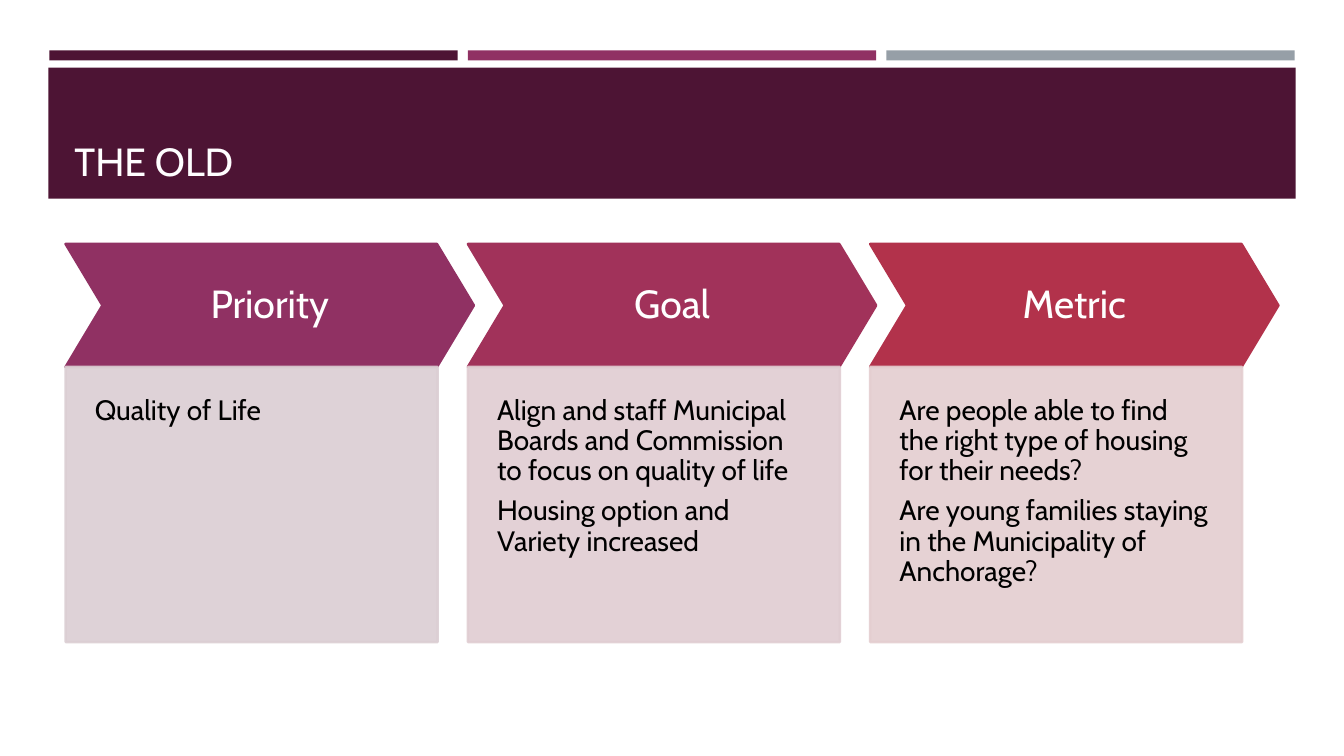
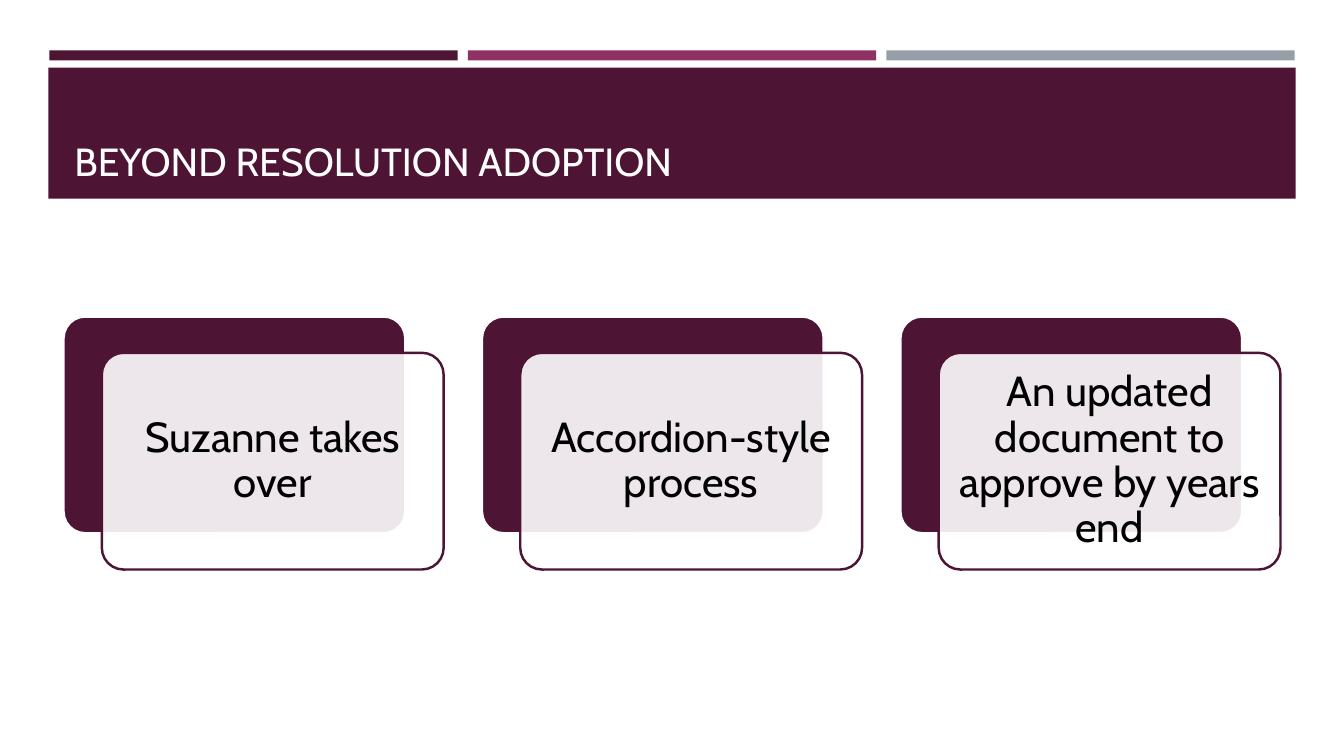
"""Build two slides: a chevron process and a row of layered cards."""
from dataclasses import dataclass

from lxml.etree import SubElement
from pptx import Presentation
from pptx.dml.color import RGBColor as Color
from pptx.dml.fill import FillFormat
from pptx.enum.shapes import MSO_SHAPE as Preset
from pptx.enum.text import MSO_ANCHOR as Anchor, PP_ALIGN as Align
from pptx.oxml.ns import qn
from pptx.shapes.autoshape import Shape
from pptx.slide import Slide
from pptx.util import Inches, Pt


@dataclass(frozen=True)
class Theme:
    font: str = "Cabin"
    plum: str = "4D1434"
    violet: str = "903163"
    grey: str = "969FA7"
    white: str = "FFFFFF"
    title: str = "FFFEFF"
    black: str = "000000"
    heading_size: int = 28
    body_size: int = 20
    card_size: int = 30
    line_width: float = 1.75
    soft: int = 90


@dataclass(frozen=True)
class Area:
    left: float
    top: float
    width: float
    height: float


@dataclass(frozen=True)
class TextStyle:
    size: int
    color: str
    align: Align = Align.LEFT
    anchor: Anchor = Anchor.TOP
    insets: tuple[float, float, float, float] = (0.1, 0.05, 0.1, 0.05)
    spacing: float = 0.9


@dataclass(frozen=True)
class Step:
    heading: str
    color: str
    tint: str
    points: tuple[str, ...]


THEME = Theme()
TITLE = TextStyle(THEME.heading_size, THEME.title, anchor=Anchor.BOTTOM, spacing=1.0)
HEADING = TextStyle(THEME.heading_size, THEME.white, Align.CENTER, Anchor.MIDDLE, (0.15,) * 4)
BODY = TextStyle(THEME.body_size, THEME.black, insets=(0.29, 0.29, 0.29, 0.58))
CARD = TextStyle(THEME.card_size, THEME.black, Align.CENTER, Anchor.MIDDLE, (0.12,) * 4)

STEPS = (
    Step("Priority", THEME.violet, "DBCED3", ("Quality of Life",)),
    Step("Goal", "A1325A", "E0CDD2", (
        "Align and staff Municipal Boards and Commission to focus on quality of life",
        "Housing option and Variety increased",
    )),
    Step("Metric", "B2324B", "E4CED0", (
        "Are people able to find the right type of housing for their needs?",
        "Are young families staying in the Municipality of Anchorage?",
    )),
)
CARDS = (
    "Suzanne takes over",
    "Accordion-style process",
    "An updated document to approve by years end",
)


def lengths(area: Area) -> tuple[Inches, ...]:
    return tuple(Inches(value) for value in (area.left, area.top, area.width, area.height))


def paint(fill: FillFormat, color: str, opacity: int = 100) -> None:
    fill.solid()
    fill.fore_color.rgb = Color.from_string(color)
    if opacity < 100:
        for node in fill._xPr.iterchildren(qn("a:solidFill")):
            SubElement(node[0], qn("a:alpha"), val=str(opacity * 1000))


def add_box(page: Slide, preset: Preset, area: Area, fill: str, line: str | None = None,
            fill_opacity: int = 100, line_opacity: int = 100,
            adjustment: float | None = None) -> Shape:
    box = page.shapes.add_shape(preset, *lengths(area))
    box.shadow.inherit = False
    paint(box.fill, fill, fill_opacity)
    if line:
        box.line.width = Pt(THEME.line_width)
        paint(box.line.fill, line, line_opacity)
    else:
        box.line.fill.background()
    if adjustment is not None:
        box.adjustments[0] = adjustment
    return box


def write(box: Shape, text: str, style: TextStyle) -> None:
    frame = box.text_frame
    frame.text = text
    frame.word_wrap = True
    frame.vertical_anchor = style.anchor
    (frame.margin_left, frame.margin_top,
     frame.margin_right, frame.margin_bottom) = map(Inches, style.insets)
    for para in frame.paragraphs:
        para.alignment = style.align
        para.line_spacing = style.spacing
        para.space_after = Pt(style.size * 0.35)
        for span in para.runs:
            span.font.name = THEME.font
            span.font.size = Pt(style.size)
            span.font.color.rgb = Color.from_string(style.color)


def add_page(deck: Presentation, title: str) -> Slide:
    page = deck.slides.add_slide(deck.slide_layouts[6])
    for index, color in enumerate((THEME.plum, THEME.violet, THEME.grey)):
        add_box(page, Preset.RECTANGLE, Area(0.49 + 4.15 * index, 0.5, 4.05, 0.1), color)
    add_box(page, Preset.RECTANGLE, Area(0.48, 0.67, 12.37, 1.3), THEME.plum)
    write(page.shapes.add_textbox(*lengths(Area(0.64, 0.77, 12.06, 1.11))), title, TITLE)
    return page


def add_step(page: Slide, index: int, step: Step) -> None:
    left = 0.65 + 3.99 * index
    chevron = add_box(page, Preset.CHEVRON, Area(left, 2.42, 4.05, 1.22),
                      step.color, step.color, adjustment=0.3)
    write(chevron, step.heading, HEADING)
    panel = add_box(page, Preset.RECTANGLE, Area(left, 3.64, 3.69, 2.73),
                    step.tint, step.tint, THEME.soft, THEME.soft)
    write(panel, "\n".join(step.points), BODY)


def add_card(page: Slide, index: int, text: str) -> None:
    left = 0.63 + 4.15 * index
    add_box(page, Preset.ROUNDED_RECTANGLE, Area(left, 3.14, 3.39, 2.15),
            THEME.plum, THEME.white, adjustment=0.1)
    front = add_box(page, Preset.ROUNDED_RECTANGLE, Area(left + 0.38, 3.5, 3.39, 2.15),
                    THEME.white, THEME.plum, THEME.soft, adjustment=0.1)
    write(front, text, CARD)


def main() -> None:
    deck = Presentation()
    deck.slide_width, deck.slide_height = Inches(13.33), Inches(7.5)
    page = add_page(deck, "THE OLD")
    for index, step in enumerate(STEPS):
        add_step(page, index, step)
    page = add_page(deck, "BEYOND RESOLUTION ADOPTION")
    for index, text in enumerate(CARDS):
        add_card(page, index, text)
    deck.save("out.pptx")


if __name__ == "__main__":
    main()
